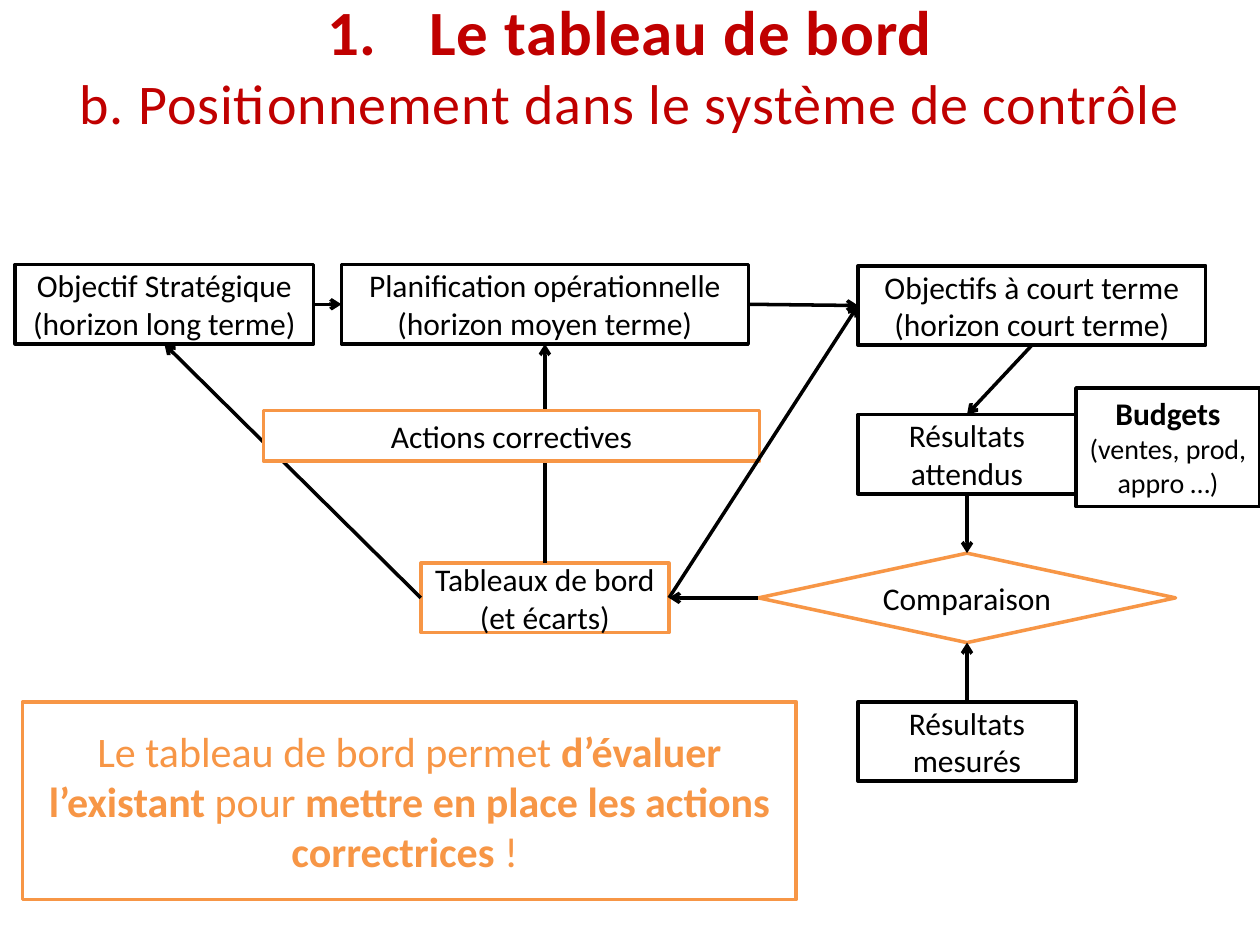
from lxml import etree
from pptx import Presentation
from pptx.dml.color import RGBColor
from pptx.enum import shapes, text
from pptx.oxml.ns import qn
from pptx.util import Inches, Pt

BLACK = RGBColor(0, 0, 0)
WHITE = RGBColor(255, 255, 255)
ORANGE = RGBColor(0xF7, 0x96, 0x46)
RED = RGBColor(0xC0, 0, 0)
RECT = shapes.MSO_SHAPE.RECTANGLE
TOP, LEFT, BOTTOM, RIGHT = range(4)


def add_span(para, words, color, **formats):
    span = para.add_run()
    span.text = words
    span.font.color.rgb = color
    for name, value in {"name": "Calibri", "size": Pt(18), "bold": False, **formats}.items():
        setattr(span.font, name, value)
    return span


def add_box(page, place, paragraphs, line=BLACK, color=BLACK, kind=RECT, grows=False):
    """Each paragraph is a list of (words, formats) spans."""
    box = page.shapes.add_shape(kind, *map(Inches, place))
    box.shadow.inherit = False
    box.fill.solid()
    box.fill.fore_color.rgb = WHITE
    box.line.color.rgb = line
    box.line.width = Pt(2)
    frame = box.text_frame
    frame.word_wrap = True
    if grows:
        frame.auto_size = text.MSO_AUTO_SIZE.SHAPE_TO_FIT_TEXT
        frame.vertical_anchor = text.MSO_ANCHOR.TOP
    else:
        frame.vertical_anchor = text.MSO_ANCHOR.MIDDLE
    for index, spans in enumerate(paragraphs):
        para = frame.add_paragraph() if index else frame.paragraphs[0]
        para.alignment = text.PP_ALIGN.CENTER
        for words, formats in spans:
            add_span(para, words, color, **formats)
    return box


def add_label(page, place, *lines, **options):
    return add_box(page, place, [[(line, {})] for line in lines], **options)


def add_arrow(page, start, start_side, end, end_side):
    arrow = page.shapes.add_connector(shapes.MSO_CONNECTOR.STRAIGHT, 0, 0, 0, 0)
    arrow.begin_connect(start, start_side)
    arrow.end_connect(end, end_side)
    arrow.line.color.rgb = BLACK
    arrow.line.width = Pt(2)
    etree.SubElement(arrow.line._get_or_add_ln(), qn("a:tailEnd"), type="arrow")
    etree.SubElement(arrow._element.spPr, qn("a:effectLst"))


def fill_title(title):
    title.left, title.top, title.width, title.height = map(Inches, (0.5, -0.11, 9, 1.25))
    frame = title.text_frame
    frame.word_wrap = True
    frame.auto_size = text.MSO_AUTO_SIZE.NONE
    frame.vertical_anchor = text.MSO_ANCHOR.TOP
    heading, subheading = frame.paragraphs[0], frame.add_paragraph()
    spans = (
        add_span(heading, "Le tableau de bord", RED, size=Pt(36), bold=True),
        add_span(subheading, "b. Positionnement dans le système de contrôle", RED, size=Pt(32)),
    )
    for span in spans:
        span.font._element.set("spc", "50")
    for para in (heading, subheading):
        para.alignment = text.PP_ALIGN.CENTER
    numbering = heading._p.get_or_add_pPr()
    numbering.set("marL", str(Inches(0.81)))
    numbering.set("indent", str(Inches(-0.81)))
    etree.SubElement(numbering, qn("a:buFont"), typeface="+mj-lt")
    etree.SubElement(numbering, qn("a:buAutoNum"), type="arabicPeriod")


def add_control_loop(page):
    strategy = add_label(page, (0.12, 2.1, 2.37, 0.63),
                         "Objectif Stratégique", "(horizon long terme)")
    planning = add_label(page, (2.71, 2.1, 3.23, 0.63),
                         "Planification opérationnelle", "(horizon moyen terme)")
    targets = add_label(page, (6.81, 2.11, 2.76, 0.63),
                        "Objectifs à court terme", "(horizon court terme)")
    expected = add_label(page, (6.81, 3.29, 1.73, 0.63), "Résultats attendus")
    comparison = add_label(page, (6.02, 4.39, 3.31, 0.71), "Comparaison", line=ORANGE,
                           kind=shapes.MSO_SHAPE.FLOWCHART_DECISION)
    measured = add_label(page, (6.81, 5.57, 1.73, 0.63), "Résultats mesurés")
    dashboard = add_label(page, (3.34, 4.47, 1.97, 0.55),
                          "Tableaux de bord (et écarts)", line=ORANGE)
    add_box(page, (8.54, 3.08, 1.46, 0.94),
            [[("Budgets ", {"bold": True}), ("(ventes, prod, appro …)", {"size": Pt(16)})]],
            grows=True)

    for link in (
        (strategy, RIGHT, planning, LEFT),
        (planning, RIGHT, targets, LEFT),
        (targets, BOTTOM, expected, TOP),
        (expected, BOTTOM, comparison, TOP),
        (measured, TOP, comparison, BOTTOM),
        (comparison, LEFT, dashboard, RIGHT),
        (dashboard, LEFT, strategy, BOTTOM),
        (dashboard, TOP, planning, BOTTOM),
    ):
        add_arrow(page, *link)
    # This label covers two of the corrective arrows; the third passes over it.
    add_label(page, (2.09, 3.26, 3.94, 0.4), "Actions correctives", line=ORANGE, grows=True)
    add_arrow(page, dashboard, RIGHT, targets, LEFT)


def add_conclusion(page):
    plain, strong = {"size": Pt(24)}, {"size": Pt(24), "bold": True}
    add_box(page, (0.18, 5.57, 6.14, 1.57), [[
        ("Le tableau de bord permet ", plain),
        ("d’évaluer l’existant", strong),
        (" pour ", plain),
        ("mettre en place les actions correctrices", strong),
        (" ! ", plain),
    ]], line=ORANGE, color=ORANGE)


def main():
    deck = Presentation()
    deck.slide_width, deck.slide_height = Inches(10), Inches(7.5)
    page = deck.slides.add_slide(deck.slide_layouts[5])
    fill_title(page.shapes.title)
    add_control_loop(page)
    add_conclusion(page)
    deck.save("out.pptx")


if __name__ == "__main__":
    main()
